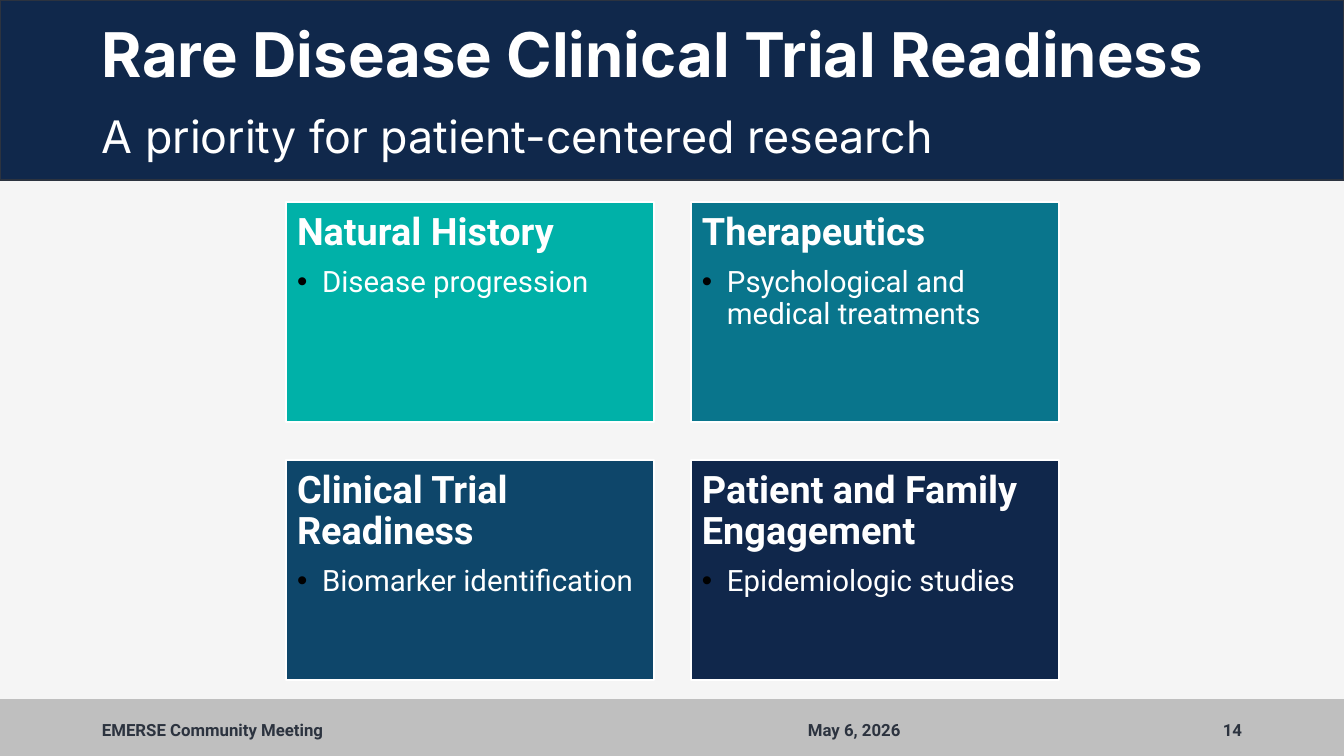
import pptx
import pptx.dml.color
import pptx.enum.shapes
import pptx.enum.text
import pptx.oxml
import pptx.oxml.ns
import pptx.util

PX = 914400 / 100.8
WIDTH, HEIGHT = 1344, 756

TITLE = "Rare Disease Clinical Trial Readiness"
SUBTITLE = "A priority for patient-centered research"
CARDS = [
    ("Natural History", "Disease progression", "00B1A8"),
    ("Therapeutics", "Psychological and medical treatments", "09758C"),
    ("Clinical Trial Readiness", "Biomarker identification", "0E466A"),
    ("Patient and Family Engagement", "Epidemiologic studies", "10274B"),
]
FOOTER = [  # text, left, width, alignment
    ("EMERSE Community Meeting", 92, 692, "LEFT"),
    ("May 6, 2026", 798, 278, "LEFT"),
    ("14", 1091, 161, "RIGHT"),
]
WHITE, NAVY, SLATE = "FFFFFF", "10284B", "2C333F"
COLUMNS, CARD_LEFT, CARD_TOP = 2, 286, 202
CARD_WIDTH, CARD_HEIGHT, STEP_X, STEP_Y = 368, 220, 405, 258


def px(n):
    return pptx.util.Emu(round(n * PX))


def rgb(color):
    return pptx.dml.color.RGBColor.from_string(color)


def add_rect(left, top, width, height, fill, line):
    s = slide.shapes.add_shape(pptx.enum.shapes.MSO_SHAPE.RECTANGLE,
                               px(left), px(top), px(width), px(height))
    s.shadow.inherit = False
    s.fill.solid()
    s.fill.fore_color.rgb = rgb(fill)
    s.line.color.rgb = rgb(line)
    s.line.width = pptx.util.Pt(1)
    return s


def add_box(left, top, width, height, anchor="MIDDLE"):
    tf = slide.shapes.add_textbox(px(left), px(top), px(width), px(height)).text_frame
    tf.word_wrap = True
    tf.vertical_anchor = pptx.enum.text.MSO_ANCHOR[anchor]
    return tf


def write(p, text, size, font="Roboto", color=WHITE, bold=False,
          align="LEFT", spacing=0.9, after=0):
    p.alignment = pptx.enum.text.PP_ALIGN[align]
    p.line_spacing = spacing
    p.space_after = pptx.util.Pt(after)
    r = p.add_run()
    r.text = text
    r.font.name = font
    r.font.size = pptx.util.Pt(size)
    r.font.bold = bold
    r.font.color.rgb = rgb(color)


def add_bullet(p, color, indent):
    pPr = p._p.get_or_add_pPr()
    pPr.set("marL", str(px(indent)))
    pPr.set("indent", str(-px(indent)))
    ns = pptx.oxml.ns.nsdecls("a")
    for xml in (f'<a:buClr {ns}><a:srgbClr val="{color}"/></a:buClr>',
                f'<a:buFont {ns} typeface="Arial"/>',
                f'<a:buChar {ns} char="•"/>'):
        pPr.append(pptx.oxml.parse_xml(xml))


def add_card(left, top, heading, detail, fill):
    tf = add_rect(left, top, CARD_WIDTH, CARD_HEIGHT, fill, WHITE).text_frame
    tf.word_wrap = True
    tf.vertical_anchor = pptx.enum.text.MSO_ANCHOR.TOP
    tf.margin_left = tf.margin_top = tf.margin_right = tf.margin_bottom = px(11)
    write(tf.paragraphs[0], heading, 27, bold=True, after=9.5)
    p = tf.add_paragraph()
    write(p, detail, 21, after=3)
    add_bullet(p, "000000", 25)


prs = pptx.Presentation()
prs.slide_width, prs.slide_height = px(WIDTH), px(HEIGHT)
slide = prs.slides.add_slide(prs.slide_layouts[6])
slide.background.fill.solid()
slide.background.fill.fore_color.rgb = rgb("F5F5F5")

add_rect(0, 700, WIDTH, 56, "BFBFBF", "BFBFBF")
add_rect(0, 0, WIDTH, 180, NAVY, SLATE)
write(add_box(92, 15, 1160, 86).paragraphs[0], TITLE, 44, font="Inter", bold=True)
write(add_box(92, 110, 1160, 64, "TOP").paragraphs[0], SUBTITLE, 32, font="Inter")

for i, card in enumerate(CARDS):
    row, column = divmod(i, COLUMNS)
    add_card(CARD_LEFT + column * STEP_X, CARD_TOP + row * STEP_Y, *card)

for text, left, width, align in FOOTER:
    write(add_box(left, 710, width, 40).paragraphs[0], text, 12,
          color=SLATE, bold=True, align=align, spacing=1.0)

prs.save("out.pptx")
